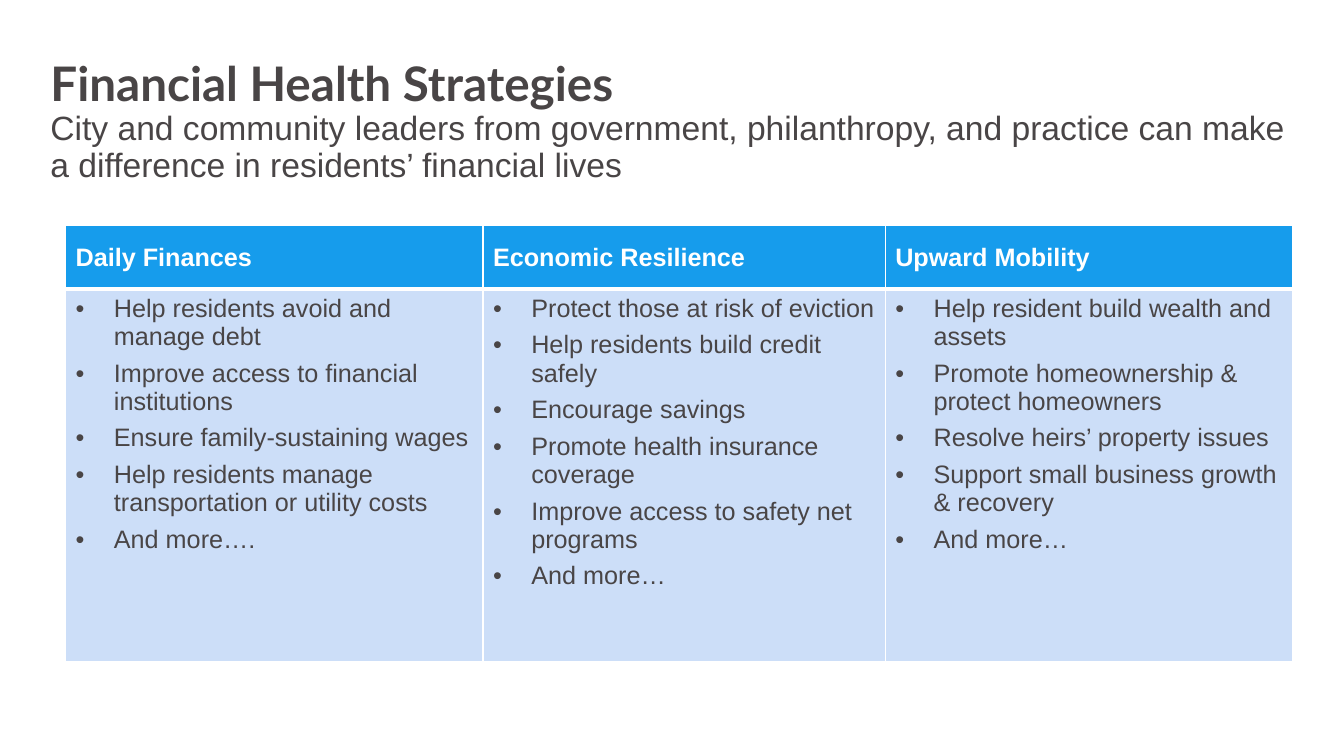
from lxml.etree import SubElement
from pptx import Presentation
from pptx.dml.color import RGBColor
from pptx.enum.text import MSO_ANCHOR, MSO_AUTO_SIZE, PP_ALIGN
from pptx.oxml.ns import qn
from pptx.util import Inches, Pt

CHARCOAL = RGBColor(0x49, 0x45, 0x46)
WHITE = RGBColor(0xFF, 0xFF, 0xFF)
HEADER_BLUE = RGBColor(0x16, 0x9C, 0xEC)
PALE_BLUE = RGBColor(0xCC, 0xDE, 0xF8)

STRATEGIES = {
    "Daily Finances": [
        "Help residents avoid and manage debt",
        "Improve access to financial institutions",
        "Ensure family-sustaining wages",
        "Help residents manage transportation or utility costs",
        "And more….",
    ],
    "Economic Resilience": [
        "Protect those at risk of eviction",
        "Help residents build credit safely",
        "Encourage savings",
        "Promote health insurance coverage",
        "Improve access to safety net programs",
        "And more…",
    ],
    "Upward Mobility": [
        "Help resident build wealth and assets",
        "Promote homeownership & protect homeowners",
        "Resolve heirs’ property issues",
        "Support small business growth & recovery",
        "And more…",
    ],
}
COLUMN_WIDTHS = [4.14, 3.99, 4.04]
ROW_HEIGHTS = [0.63, 3.69]
BULLET_INDENT = Inches(0.38)


def add_span(para, text, size=18, font="Arial", color=CHARCOAL, bold=False):
    span = para.add_run()
    span.text = text
    span.font.size = Pt(size)
    span.font.name = font
    span.font.color.rgb = color
    span.font.bold = bold


def style_cell(cell, fill, bottom=1):
    properties = cell._tc.get_or_add_tcPr()
    for side, width in {"L": 1, "R": 1, "T": 1, "B": bottom}.items():
        border = SubElement(properties, qn(f"a:ln{side}"), w=str(Pt(width)))
        paint = SubElement(border, qn("a:solidFill"))
        SubElement(paint, qn("a:srgbClr"), val=str(WHITE))
    cell.fill.solid()
    cell.fill.fore_color.rgb = fill


deck = Presentation()
deck.slide_width = Inches(13.33)
deck.slide_height = Inches(7.5)
page = deck.slides.add_slide(deck.slide_layouts[5])

title = page.shapes.title
title.left, title.top = Inches(0.5), Inches(0.58)
title.width, title.height = Inches(12.33), Inches(1.27)
frame = title.text_frame
frame.word_wrap = True
frame.auto_size = MSO_AUTO_SIZE.NONE
frame.vertical_anchor = MSO_ANCHOR.MIDDLE
frame.margin_left = frame.margin_right = 0
frame.margin_top = frame.margin_bottom = Inches(0.05)
para = frame.paragraphs[0]
para.alignment = PP_ALIGN.LEFT
para.line_spacing = 0.9
add_span(para, "Financial Health Strategies", size=34, font="Lato", bold=True)
para.add_line_break()
add_span(
    para,
    "City and community leaders from government, philanthropy, and practice "
    "can make a difference in residents’ financial lives",
    size=24,
)

table = page.shapes.add_table(
    len(ROW_HEIGHTS), len(COLUMN_WIDTHS), Inches(0.65), Inches(2.24),
    Inches(sum(COLUMN_WIDTHS)), Inches(sum(ROW_HEIGHTS)),
).table
for row, height in zip(table.rows, ROW_HEIGHTS):
    row.height = Inches(height)

for index, (heading, actions) in enumerate(STRATEGIES.items()):
    table.columns[index].width = Inches(COLUMN_WIDTHS[index])

    header = table.cell(0, index)
    style_cell(header, HEADER_BLUE, bottom=3)
    header.vertical_anchor = MSO_ANCHOR.MIDDLE
    add_span(header.text_frame.paragraphs[0], heading, color=WHITE, bold=True)

    body = table.cell(1, index)
    style_cell(body, PALE_BLUE)
    for number, action in enumerate(actions):
        if number:
            para = body.text_frame.add_paragraph()
            para.space_before = Pt(6)
        else:
            para = body.text_frame.paragraphs[0]
        properties = para._p.get_or_add_pPr()
        properties.set("marL", str(BULLET_INDENT))
        properties.set("indent", str(-BULLET_INDENT))
        SubElement(properties, qn("a:buFont"), typeface="Arial")
        SubElement(properties, qn("a:buChar"), char="•")
        add_span(para, action)

deck.save("out.pptx")
